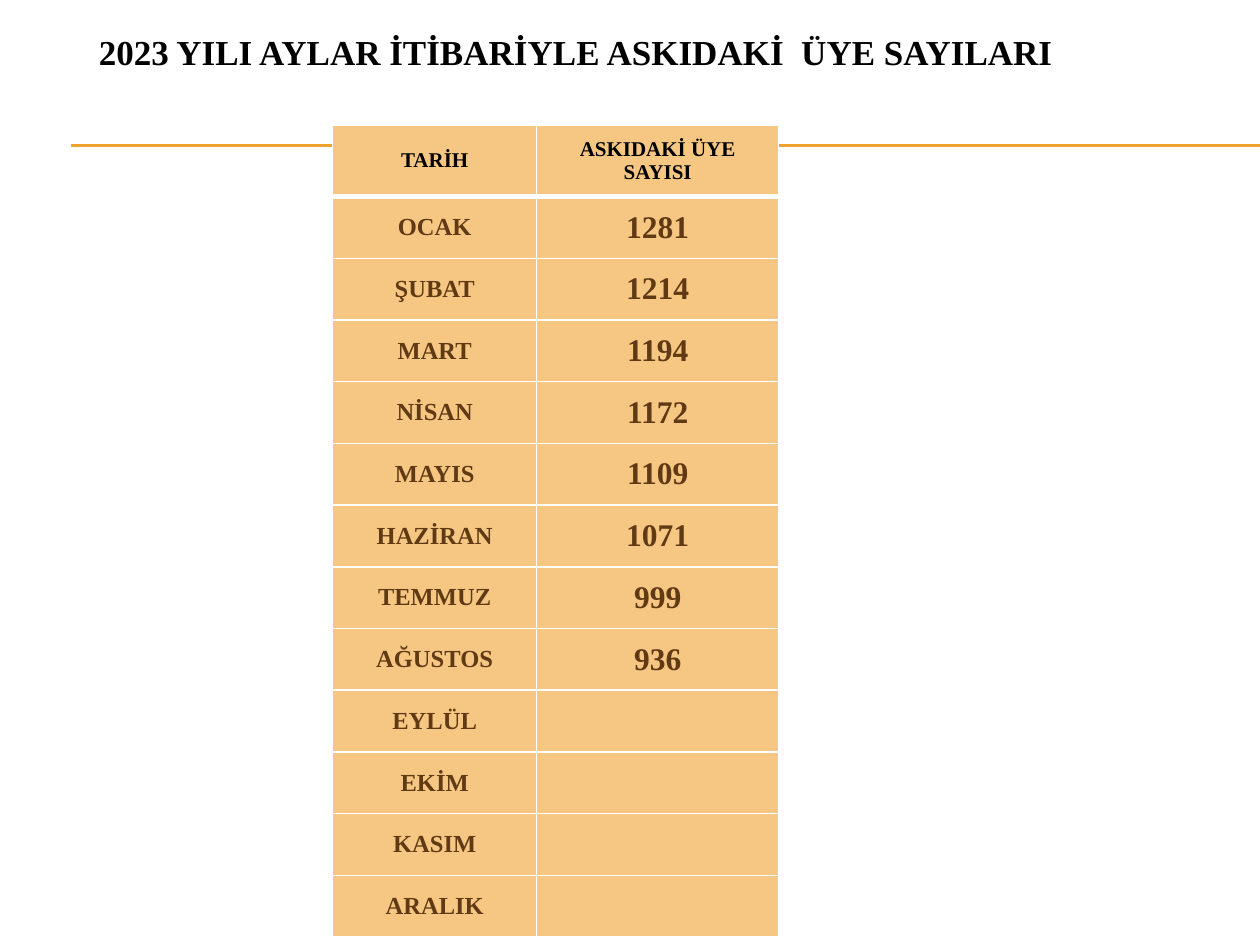
import pptx
import pptx.dml.color
import pptx.enum.shapes
import pptx.enum.text
import pptx.oxml.ns
import pptx.util
from lxml import etree

Inches = pptx.util.Inches
Pt = pptx.util.Pt

# Content
TITLE = "2023 YILI AYLAR İTİBARİYLE ASKIDAKİ  ÜYE SAYILARI"
HEADER = ("TARİH", "ASKIDAKİ ÜYE SAYISI")
MONTHS = [
    ("OCAK", "1281"), ("ŞUBAT", "1214"), ("MART", "1194"), ("NİSAN", "1172"),
    ("MAYIS", "1109"), ("HAZİRAN", "1071"), ("TEMMUZ", "999"), ("AĞUSTOS", "936"),
    ("EYLÜL", ""), ("EKİM", ""), ("KASIM", ""), ("ARALIK", ""),
]

# Formats
FONT = "Times New Roman"
BLACK, BROWN, SAND, GOLD, WHITE = "000000", "603A14", "F6C782", "F0A22E", "FFFFFF"
TITLE_FORMAT = {"name": FONT, "bold": True, "size": Pt(20)}
HEADER_FORMAT = {"name": FONT, "bold": True, "size": Pt(12)}
BODY_FORMATS = [
    {"name": FONT, "bold": True, "size": Pt(14)},
    {"name": FONT, "bold": True, "size": Pt(18)},
]

# Layout
COLUMN_WIDTHS = (1.62, 1.92)
HEADER_HEIGHT, ROW_HEIGHT = 0.57, 0.49
RULE_HEIGHTS = (1.15, 1.16)


def rgb(value):
    return pptx.dml.color.RGBColor.from_string(value)


def write(frame, text, formats, color):
    frame.word_wrap = True
    para = frame.paragraphs[0]
    para.alignment = pptx.enum.text.PP_ALIGN.CENTER
    span = para.add_run()
    span.text = text
    for name, value in formats.items():
        setattr(span.font, name, value)
    span.font.color.rgb = rgb(color)


def add_rule(page, top):
    rule = page.shapes.add_connector(
        pptx.enum.shapes.MSO_CONNECTOR.STRAIGHT,
        Inches(0.56), Inches(top), Inches(10), Inches(top))
    rule.line.color.rgb = rgb(GOLD)
    rule.line.width = Pt(0.75)
    etree.SubElement(rule.element.spPr, pptx.oxml.ns.qn("a:effectLst"))


def set_borders(cell, widths):
    properties = cell._tc.get_or_add_tcPr()
    for position, (side, width) in enumerate(widths.items()):
        border = etree.Element(pptx.oxml.ns.qn(f"a:ln{side}"), w=str(Pt(width)))
        fill = etree.SubElement(border, pptx.oxml.ns.qn("a:solidFill"))
        etree.SubElement(fill, pptx.oxml.ns.qn("a:srgbClr"), val=WHITE)
        properties.insert(position, border)


def add_month_table(page):
    rows = [HEADER] + MONTHS
    heights = [HEADER_HEIGHT] + [ROW_HEIGHT] * len(MONTHS)
    table = page.shapes.add_table(
        len(rows), len(HEADER), Inches(2.64), Inches(0.99),
        Inches(sum(COLUMN_WIDTHS)), Inches(sum(heights))).table
    for column, width in zip(table.columns, COLUMN_WIDTHS):
        column.width = Inches(width)
    for r, (texts, height) in enumerate(zip(rows, heights)):
        table.rows[r].height = Inches(height)
        for c, text in enumerate(texts):
            cell = table.cell(r, c)
            cell.fill.solid()
            cell.fill.fore_color.rgb = rgb(SAND)
            cell.vertical_anchor = pptx.enum.text.MSO_ANCHOR.MIDDLE
            # The header is set off by a thicker line below it
            set_borders(cell, {"L": 1, "R": 1, "T": 3 if r == 1 else 1,
                               "B": 3 if r == 0 else 1})
            if text:
                formats = HEADER_FORMAT if r == 0 else BODY_FORMATS[c]
                write(cell.text_frame, text, formats, BLACK if r == 0 else BROWN)


def main():
    deck = pptx.Presentation()
    deck.slide_width, deck.slide_height = Inches(10), Inches(7.5)
    page = deck.slides.add_slide(deck.slide_layouts[6])

    # Double rule behind the table
    for top in RULE_HEIGHTS:
        add_rule(page, top)

    add_month_table(page)

    # Title
    box = page.shapes.add_textbox(Inches(0.28), Inches(0.05), Inches(8.58), Inches(0.71))
    box.text_frame.vertical_anchor = pptx.enum.text.MSO_ANCHOR.MIDDLE
    write(box.text_frame, TITLE, TITLE_FORMAT, BLACK)

    deck.save("out.pptx")


if __name__ == "__main__":
    main()
